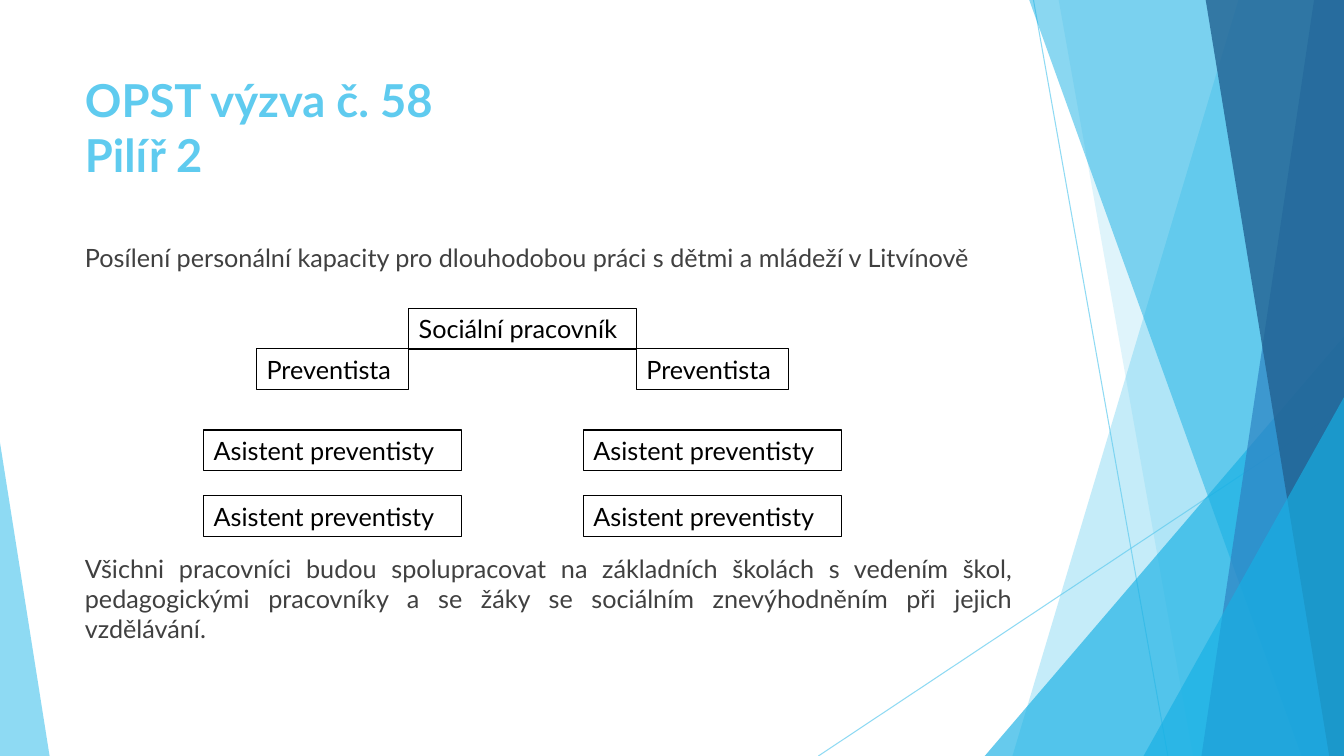
from pptx import Presentation
from pptx.dml.color import RGBColor
from pptx.enum.shapes import MSO_CONNECTOR, MSO_SHAPE
from pptx.enum.text import MSO_ANCHOR, MSO_AUTO_SIZE, PP_ALIGN
from pptx.oxml.ns import qn
from pptx.util import Inches, Pt
from lxml.etree import SubElement

SKY = RGBColor(0x5F, 0xCB, 0xEF)
CYAN = RGBColor(0x17, 0xB0, 0xE4)
BLUE = RGBColor(0x2E, 0x83, 0xC3)
NAVY = RGBColor(0x22, 0x62, 0x92)
GRAY = RGBColor(0x40, 0x40, 0x40)
BLACK = RGBColor(0, 0, 0)
COLS, ROWS = 160, 90


class Deck:
    """Holds the style and the current slide, measured on a 160 by 90 grid."""

    def __init__(self):
        self.show = Presentation()
        self.show.slide_width = Inches(13.33)
        self.show.slide_height = Inches(7.5)
        self.unit = self.show.slide_height / ROWS
        self.font = "Lato"
        self.slide = self.show.slides.add_slide(self.show.slide_layouts[1])
        self.shapes = self.slide.shapes

    def grid(self, *cells):
        return [round(cell * self.unit) for cell in cells]

    def fade(self, fill, host, color, share):
        fill.solid()
        fill.fore_color.rgb = color
        for tint in host.iter(qn("a:srgbClr")):
            SubElement(tint, qn("a:alpha"), val=str(share * 1000))

    def paint(self, shape, color, share):
        shape.shadow.inherit = False
        shape.line.fill.background()
        self.fade(shape.fill, shape.element.spPr, color, share)

    def line(self, *ends):
        line = self.shapes.add_connector(MSO_CONNECTOR.STRAIGHT, *self.grid(*ends))
        line.line.width = Pt(0.75)
        self.fade(line.line.fill, line.element.spPr, SKY, 70)
        SubElement(line.element.spPr, qn("a:effectLst"))

    def band(self, top, foot, color, share):
        pen = self.shapes.build_freeform(*self.grid(top, 0))
        points = [(COLS, 0), (COLS, ROWS), (foot, ROWS)]
        pen.add_line_segments([self.grid(*point) for point in points])
        self.paint(pen.convert_to_shape(), color, share)

    def wedge(self, left, top, width, tip, color, share):
        area = self.grid(left, top, width, ROWS - top)
        shape = self.shapes.add_shape(MSO_SHAPE.ISOSCELES_TRIANGLE, *area)
        shape.adjustments[0] = tip
        self.paint(shape, color, share)

    def style(self, para, size, color, bold=False, align=PP_ALIGN.LEFT):
        para.alignment = align
        for run in para.runs:
            run.font.name = self.font
            run.font.size = Pt(size)
            run.font.bold = bold
            run.font.color.rgb = color

    def place(self, holder, text, *area):
        holder.left, holder.top, holder.width, holder.height = self.grid(*area)
        self.shapes.element.append(holder.element)
        frame = holder.text_frame
        frame.text = text
        frame.word_wrap = True
        frame.auto_size = MSO_AUTO_SIZE.NONE
        frame.vertical_anchor = MSO_ANCHOR.TOP
        return frame.paragraphs

    def title(self, text, *area):
        for para in self.place(self.shapes.title, text, *area):
            self.style(para, 32.4, SKY, True)

    def body(self, items, gap, *area):
        paras = self.place(self.slide.placeholders[1], "\n".join(items), *area)
        for spot, para in enumerate(paras):
            self.style(para, 18, GRAY, align=PP_ALIGN.JUSTIFY if spot else PP_ALIGN.LEFT)
            para.space_before = Pt(gap * spot)
            props = para._p.get_or_add_pPr()
            props.set("marL", "0")
            props.set("indent", "0")
            SubElement(props, qn("a:buNone"))

    def box(self, text, mid, top, width):
        area = self.grid(mid - width / 2, top, width, 4.85)
        shape = self.shapes.add_shape(MSO_SHAPE.RECTANGLE, *area)
        shape.shadow.inherit = False
        shape.fill.background()
        shape.line.color.rgb = BLACK
        shape.line.width = Pt(1)
        shape.text_frame.text = text
        shape.text_frame.word_wrap = True
        self.style(shape.text_frame.paragraphs[0], 18, BLACK)


def main():
    deck = Deck()
    deck.line(123, 0, 139, ROWS)
    deck.line(COLS, 48.4, 97.4, ROWS)
    deck.band(147.4, 120.5, SKY, 36)
    deck.band(126, 142, SKY, 20)
    deck.wedge(117.2, 40, 42.8, 1, CYAN, 66)
    deck.band(122.5, 154.9, CYAN, 50)
    deck.band(156.4, 143, BLUE, 70)
    deck.band(143.5, 158.2, NAVY, 80)
    deck.wedge(136.1, 47.2, 23.9, 1, CYAN, 66)
    deck.wedge(0, 52.7, 5.9, 0, SKY, 70)

    deck.title("OPST výzva č. 58\vPilíř 2", 8.9, 8, 112.8, 17.3)
    deck.body([
        "Posílení personální kapacity pro dlouhodobou práci s dětmi a mládeží v Litvínově",
        "Všichni pracovníci budou spolupracovat na základních školách s vedením škol, "
        "pedagogickými pracovníky a se žáky se sociálním znevýhodněním při jejich vzdělávání.",
    ], 200, 8.9, 28.3, 112.8, 50.9)

    mid, step = 62.2, 22.6
    deck.box("Sociální pracovník", mid, 36.7, 27.1)
    for side in (mid - step, mid + step):
        deck.box("Preventista", side, 41.5, 18.1)
        for row in (51.2, 59):
            deck.box("Asistent preventisty", side, row, 30.7)
    deck.show.save("out.pptx")


if __name__ == "__main__":
    main()
